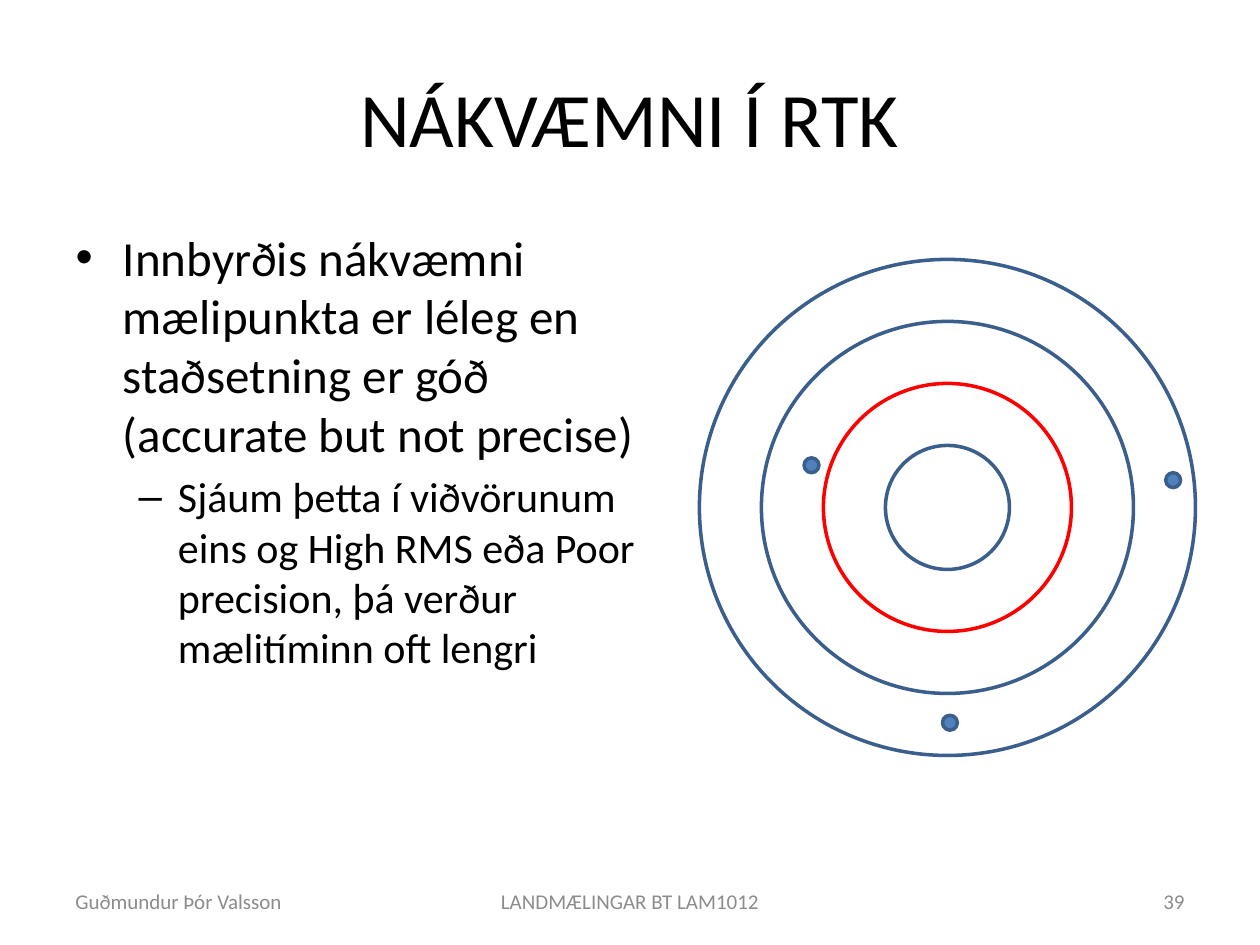
import pptx
import pptx.dml.color
import pptx.enum.shapes
import pptx.enum.text
import pptx.util

Cm = pptx.util.Cm
RGBColor = pptx.dml.color.RGBColor
Align = pptx.enum.text.PP_ALIGN
Anchor = pptx.enum.text.MSO_ANCHOR

BLACK = RGBColor(0x00, 0x00, 0x00)
GRAY = RGBColor(0x8C, 0x8C, 0x8C)
NAVY = RGBColor(0x3A, 0x5F, 0x8C)
BLUE = RGBColor(0x4F, 0x81, 0xBD)
RED = RGBColor(0xFF, 0x00, 0x00)


def write(para, text, size, color=BLACK, align=Align.LEFT):
    para.alignment = align
    span = para.add_run()
    span.text = text
    span.font.name = "Calibri"
    span.font.size = pptx.util.Pt(size)
    span.font.color.rgb = color


def place(shape, left, top, width, height):
    shape.left, shape.top = Cm(left), Cm(top)
    shape.width, shape.height = Cm(width), Cm(height)


def add_title(page, left, top, width, height):
    title = page.shapes.title
    place(title, left, top, width, height)
    title.text_frame.auto_size = pptx.enum.text.MSO_AUTO_SIZE.NONE
    title.text_frame.vertical_anchor = Anchor.MIDDLE
    write(title.text_frame.paragraphs[0], "NÁKVÆMNI Í RTK", 44, align=Align.CENTER)


def add_body(page, left, top, width, height):
    body = page.placeholders[1]
    place(body, left, top, width, height)
    frame = body.text_frame
    frame.auto_size = pptx.enum.text.MSO_AUTO_SIZE.NONE
    first = frame.paragraphs[0]
    first.space_before = pptx.util.Pt(0)
    write(first, "Innbyrðis nákvæmni mælipunkta er léleg en staðsetning er góð "
          "(accurate but not precise)", 28)
    second = frame.add_paragraph()
    second.level = 1
    write(second, "Sjáum þetta í viðvörunum eins og High RMS eða Poor precision, "
          "þá verður mælitíminn oft lengri", 24)


def add_circle(shapes, center_x, center_y, diameter, line, fill=None):
    circle = shapes.add_shape(
        pptx.enum.shapes.MSO_SHAPE.OVAL,
        Cm(center_x - diameter / 2), Cm(center_y - diameter / 2),
        Cm(diameter), Cm(diameter))
    circle.shadow.inherit = False
    circle.line.color.rgb = line
    circle.line.width = pptx.util.Pt(2)
    if fill is None:
        circle.fill.background()
    else:
        circle.fill.solid()
        circle.fill.fore_color.rgb = fill


def add_target(page, left, top, size):
    center_x, center_y = left + size / 2, top + size / 2
    rings = page.shapes.add_group_shape()
    for step, color in zip((4, 3, 2, 1), (NAVY, NAVY, RED, NAVY)):
        add_circle(rings.shapes, center_x, center_y, size * step / 4, color)
    for offset_x, offset_y in ((4.55, -0.55), (-2.74, -0.85), (0.05, 4.34)):
        add_circle(page.shapes, center_x + offset_x, center_y + offset_y,
                   0.3, NAVY, BLUE)


def add_footer(page, left, top, width, height):
    side, middle = 5.92, 8.05
    entries = (
        ("Guðmundur Þór Valsson", left, side, Align.LEFT),
        ("LANDMÆLINGAR BT LAM1012", left + (width - middle) / 2, middle, Align.CENTER),
        ("39", left + width - side, side, Align.RIGHT),
    )
    for text, box_left, box_width, align in entries:
        box = page.shapes.add_textbox(Cm(box_left), Cm(top), Cm(box_width), Cm(height))
        box.text_frame.word_wrap = True
        box.text_frame.vertical_anchor = Anchor.MIDDLE
        write(box.text_frame.paragraphs[0], text, 12, GRAY, align)


def main():
    deck = pptx.Presentation()
    deck.slide_width, deck.slide_height = Cm(25.4), Cm(19.05)
    page = deck.slides.add_slide(deck.slide_layouts[1])
    add_title(page, 1.27, 0.76, 22.86, 3.18)
    add_body(page, 1.27, 4.45, 12.22, 12.57)
    add_footer(page, 1.27, 17.65, 22.86, 1.02)
    add_target(page, 14.1, 5.23, 10)
    deck.save("out.pptx")


if __name__ == "__main__":
    main()
